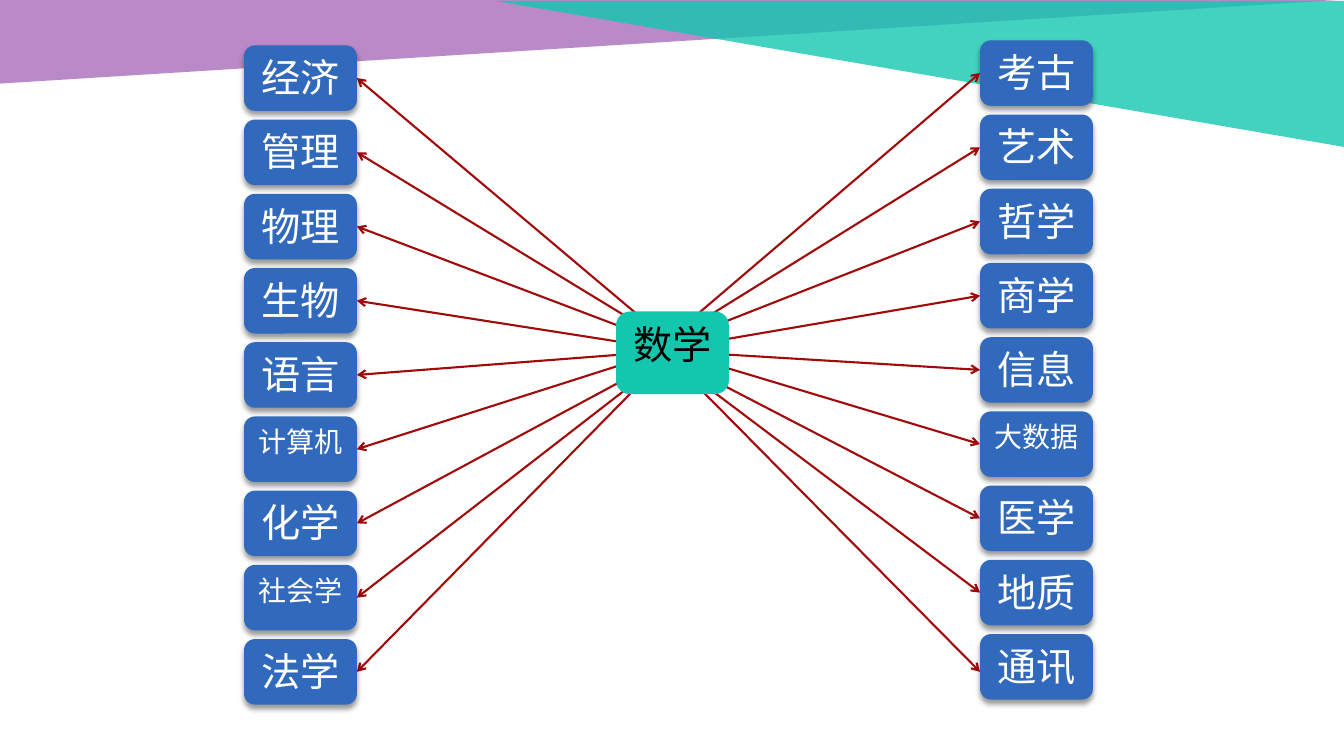
from lxml import etree
from pptx import Presentation
from pptx.dml.color import RGBColor
from pptx.enum.shapes import MSO_CONNECTOR, MSO_SHAPE
from pptx.enum.text import MSO_ANCHOR, PP_ALIGN
from pptx.oxml import parse_xml
from pptx.oxml.ns import qn
from pptx.util import Inches, Pt

ROUNDED = MSO_SHAPE.ROUNDED_RECTANGLE
TRIANGLE = MSO_SHAPE.RIGHT_TRIANGLE
STRAIGHT = MSO_CONNECTOR.STRAIGHT
CENTER = PP_ALIGN.CENTER
TOP = MSO_ANCHOR.TOP

PURPLE = RGBColor(0xA8, 0x6C, 0xBB)
TEAL = RGBColor(0x13, 0xC7, 0xAF)
BLUE = RGBColor(0x31, 0x69, 0xBD)
RED = RGBColor(0xA1, 0x0A, 0x0A)
WHITE = RGBColor(0xFF, 0xFF, 0xFF)
BLACK = RGBColor(0, 0, 0)

# Lengths in inches
SLIDE_WIDTH, SLIDE_HEIGHT = 13.33, 7.5
BOX_WIDTH, BOX_HEIGHT = 1.12, 0.65
COLUMN_HEIGHT = 6.54
LEFT_COLUMN = (2.42, 0.45, BOX_WIDTH, COLUMN_HEIGHT)
RIGHT_COLUMN = (9.72, 0.4, BOX_WIDTH, COLUMN_HEIGHT)
HUB = (6.11, 3.09, BOX_WIDTH, 0.82)
FAN_CENTER = 6.62

LEFT_SUBJECTS = ["经济", "管理", "物理", "生物", "语言", "计算机", "化学", "社会学", "法学"]
RIGHT_SUBJECTS = ["考古", "艺术", "哲学", "商学", "信息", "大数据", "医学", "地质", "通讯"]
# Inner arrow ends: distance past the centre line, and height on the slide
INNER_ENDS = [(0.01, 3.38), (0.05, 3.42), (0.01, 3.42), (0.03, 3.47), (0.03, 3.48),
              (0.01, 3.47), (0.03, 3.52), (0.03, 3.52), (0.01, 3.52)]

SHADOW = """<a:effectLst xmlns:a="http://schemas.openxmlformats.org/drawingml/2006/main">
<a:outerShdw blurRad="50800" dist="38100" dir="5400000" algn="t" rotWithShape="0">
<a:srgbClr val="000000"><a:alpha val="40000"/></a:srgbClr></a:outerShdw></a:effectLst>"""


def add_filled_shape(slide, kind, box, color):
    shape = slide.shapes.add_shape(kind, *map(Inches, box))
    shape.shadow.inherit = False
    shape.fill.solid()
    shape.fill.fore_color.rgb = color
    shape.line.fill.background()
    return shape


def write_text(shape, text, size=28, color=WHITE, font="Arial", align=CENTER, anchor=TOP):
    frame = shape.text_frame
    frame.word_wrap = True
    frame.vertical_anchor = anchor
    paragraph = frame.paragraphs[0]
    paragraph.alignment = align
    run = paragraph.add_run()
    run.text = text
    run.font.size = Pt(size)
    run.font.name = font
    run.font.color.rgb = color


def add_corner(slide, box, color, flips):
    """Translucent triangle hanging from the top edge."""
    shape = add_filled_shape(slide, TRIANGLE, box, color)
    properties = shape.element.spPr
    for flip in flips:
        properties.find(qn("a:xfrm")).set(flip, "1")
    fill_color = properties.find(qn("a:solidFill")).find(qn("a:srgbClr"))
    etree.SubElement(fill_color, qn("a:alpha")).set("val", "80000")


def add_arrow(slide, start, end):
    arrow = slide.shapes.add_connector(STRAIGHT, *map(Inches, start + end))
    arrow.line.color.rgb = RED
    arrow.line.width = Pt(1.5)
    properties = arrow.element.spPr
    for tag in ("a:headEnd", "a:tailEnd"):
        etree.SubElement(properties.find(qn("a:ln")), qn(tag)).set("type", "arrow")
    etree.SubElement(properties, qn("a:effectLst"))


def row_tops(box, count):
    _, top, _, height = box
    step = (height - BOX_HEIGHT) / (count - 1)
    return [top + row * step for row in range(count)]


def add_fan(slide, box, side, last_drop=0):
    """Arrows between a column's inner edge and the hub; side is -1 left, 1 right."""
    left, _, width, _ = box
    edge = left + width if side < 0 else left
    tops = row_tops(box, len(INNER_ENDS))
    tops[-1] += last_drop
    for top, (reach, height) in zip(tops, INNER_ENDS):
        add_arrow(slide, (edge, top + BOX_HEIGHT / 2), (FAN_CENTER - side * reach, height))


def add_column(slide, box, subjects):
    left, _, width, _ = box
    for top, subject in zip(row_tops(box, len(subjects)), subjects):
        shape = add_filled_shape(slide, ROUNDED, (left, top, width, BOX_HEIGHT), BLUE)
        properties = shape.element.spPr
        properties.replace(properties.find(qn("a:effectLst")), parse_xml(SHADOW))
        write_text(shape, subject, size=28 if len(subject) == 2 else 20)


def add_hub(slide, box):
    write_text(add_filled_shape(slide, ROUNDED, box, TEAL), "数学", color=BLACK)


def main():
    presentation = Presentation()
    presentation.slide_width = Inches(SLIDE_WIDTH)
    presentation.slide_height = Inches(SLIDE_HEIGHT)
    blank_layout = presentation.slide_layouts[6]
    slide = presentation.slides.add_slide(blank_layout)

    # Corner decoration
    add_corner(slide, (0, 0, 13.28, 0.83), PURPLE, ["flipV"])
    add_corner(slide, (4.92, 0.01, 8.42, 1.45), TEAL, ["flipH", "flipV"])

    # Arrows lie behind the hub and the subjects
    add_fan(slide, LEFT_COLUMN, -1)
    add_fan(slide, RIGHT_COLUMN, 1, last_drop=0.05)
    add_hub(slide, HUB)
    add_column(slide, LEFT_COLUMN, LEFT_SUBJECTS)
    add_column(slide, RIGHT_COLUMN, RIGHT_SUBJECTS)

    presentation.save("out.pptx")


if __name__ == "__main__":
    main()
